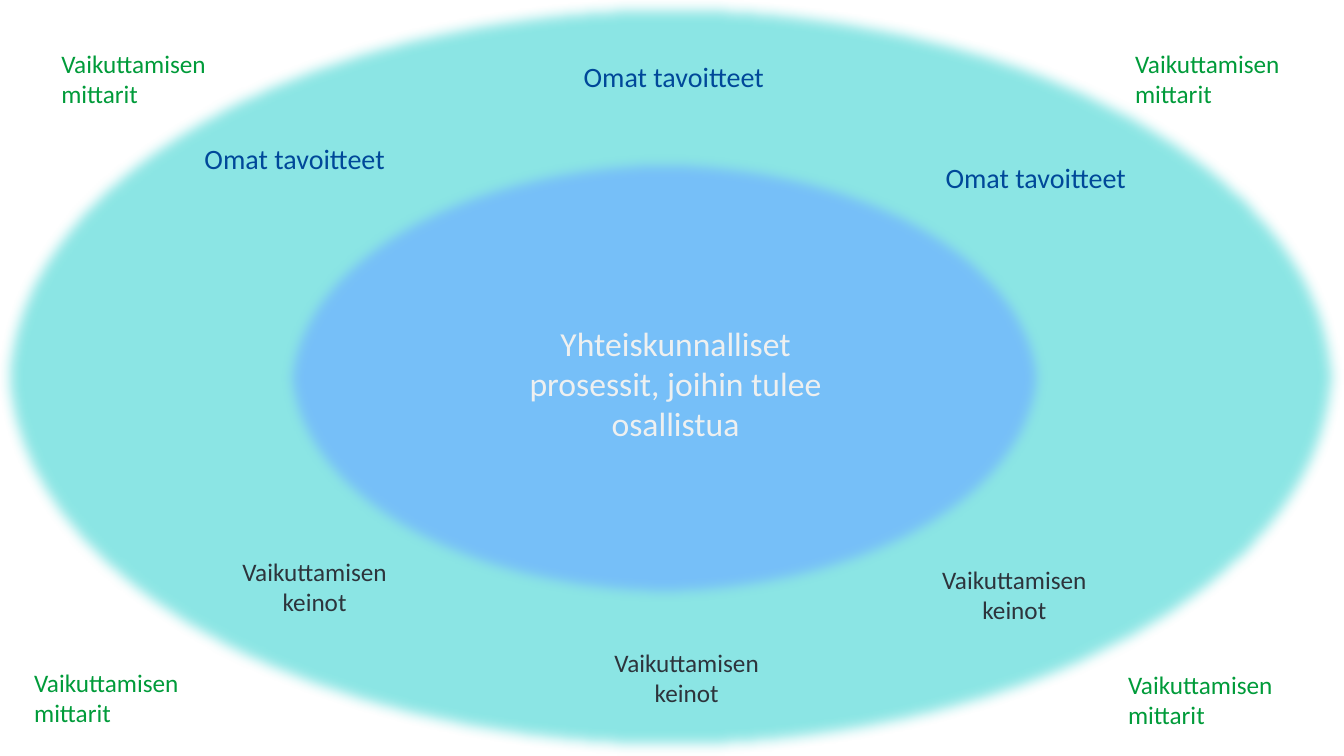
from dataclasses import dataclass

from lxml import etree
from pptx import Presentation
from pptx.dml.color import RGBColor
from pptx.enum import shapes, text
from pptx.oxml import ns
from pptx.util import Inches, Pt

FONT = "Calibri"
SOFT_EDGE = Inches(0.12)


@dataclass(frozen=True)
class Ellipse:
    left: float
    top: float
    width: float
    height: float
    color: str
    opacity: int


@dataclass(frozen=True)
class LabelStyle:
    wording: str
    size: int
    color: str
    width: float
    height: float
    alignment: text.PP_ALIGN


PROCESSES = LabelStyle("Yhteiskunnalliset prosessit, joihin tulee osallistua",
                       24, "EEF0F0", 3.12, 1.31, text.PP_ALIGN.CENTER)
MEANS = LabelStyle("Vaikuttamisen keinot", 18, "2D343C", 1.78, 0.71, text.PP_ALIGN.CENTER)
METRICS = LabelStyle("Vaikuttamisen mittarit", 18, "009B3A", 1.99, 0.71, text.PP_ALIGN.LEFT)
GOALS = LabelStyle("Omat tavoitteet", 20, "004899", 2.23, 0.44, text.PP_ALIGN.LEFT)

ELLIPSES = [
    Ellipse(0, 0, 13.33, 7.5, "5BDCD9", 70),
    Ellipse(2.79, 1.53, 7.6, 4.45, "70B3FF", 75),
]
LABEL_POSITIONS = {
    METRICS: [(0.51, 0.43), (11.16, 0.43), (11.09, 6.59), (0.24, 6.57)],
    GOALS: [(1.93, 1.35), (5.69, 0.54), (9.28, 1.54)],
    MEANS: [(2.23, 5.47), (5.92, 6.37), (9.17, 5.55)],
}


def rgb(color: str) -> RGBColor:
    return RGBColor.from_string(color)


def add_ellipse(slide, ellipse: Ellipse) -> None:
    """Draw a translucent ellipse with soft edges."""
    shape = slide.shapes.add_shape(
        shapes.MSO_SHAPE.OVAL, Inches(ellipse.left), Inches(ellipse.top),
        Inches(ellipse.width), Inches(ellipse.height))
    shape.shadow.inherit = False
    shape.line.fill.background()
    shape.fill.solid()
    shape.fill.fore_color.rgb = rgb(ellipse.color)
    properties = shape.element.spPr
    fill_color = properties.find(ns.qn("a:solidFill")).find(ns.qn("a:srgbClr"))
    etree.SubElement(fill_color, ns.qn("a:alpha"), val=str(ellipse.opacity * 1000))
    effects = properties.find(ns.qn("a:effectLst"))
    etree.SubElement(effects, ns.qn("a:softEdge"), rad=str(SOFT_EDGE))


def write_label(shape, style: LabelStyle) -> None:
    frame = shape.text_frame
    frame.word_wrap = True
    frame.auto_size = text.MSO_AUTO_SIZE.SHAPE_TO_FIT_TEXT
    frame.vertical_anchor = text.MSO_ANCHOR.TOP
    paragraph = frame.paragraphs[0]
    paragraph.alignment = style.alignment
    run = paragraph.add_run()
    run.text = style.wording
    run.font.name = FONT
    run.font.size = Pt(style.size)
    run.font.color.rgb = rgb(style.color)


def add_label(slide, style: LabelStyle, left: float, top: float) -> None:
    box = slide.shapes.add_textbox(
        Inches(left), Inches(top), Inches(style.width), Inches(style.height))
    write_label(box, style)


def place_title(slide, style: LabelStyle, left: float, top: float) -> None:
    """Move the title placeholder to the centre, in front of the ellipses."""
    title = slide.shapes.title
    title.left, title.top = Inches(left), Inches(top)
    title.width, title.height = Inches(style.width), Inches(style.height)
    write_label(title, style)
    title.element.getparent().append(title.element)


def main() -> None:
    presentation = Presentation()
    presentation.slide_width = Inches(13.33)
    presentation.slide_height = Inches(7.5)
    slide = presentation.slides.add_slide(presentation.slide_layouts.get_by_name("Title Only"))
    for ellipse in ELLIPSES:
        add_ellipse(slide, ellipse)
    place_title(slide, PROCESSES, 5.14, 3.15)
    for style, positions in LABEL_POSITIONS.items():
        for left, top in positions:
            add_label(slide, style, left, top)
    presentation.save("out.pptx")


if __name__ == "__main__":
    main()
